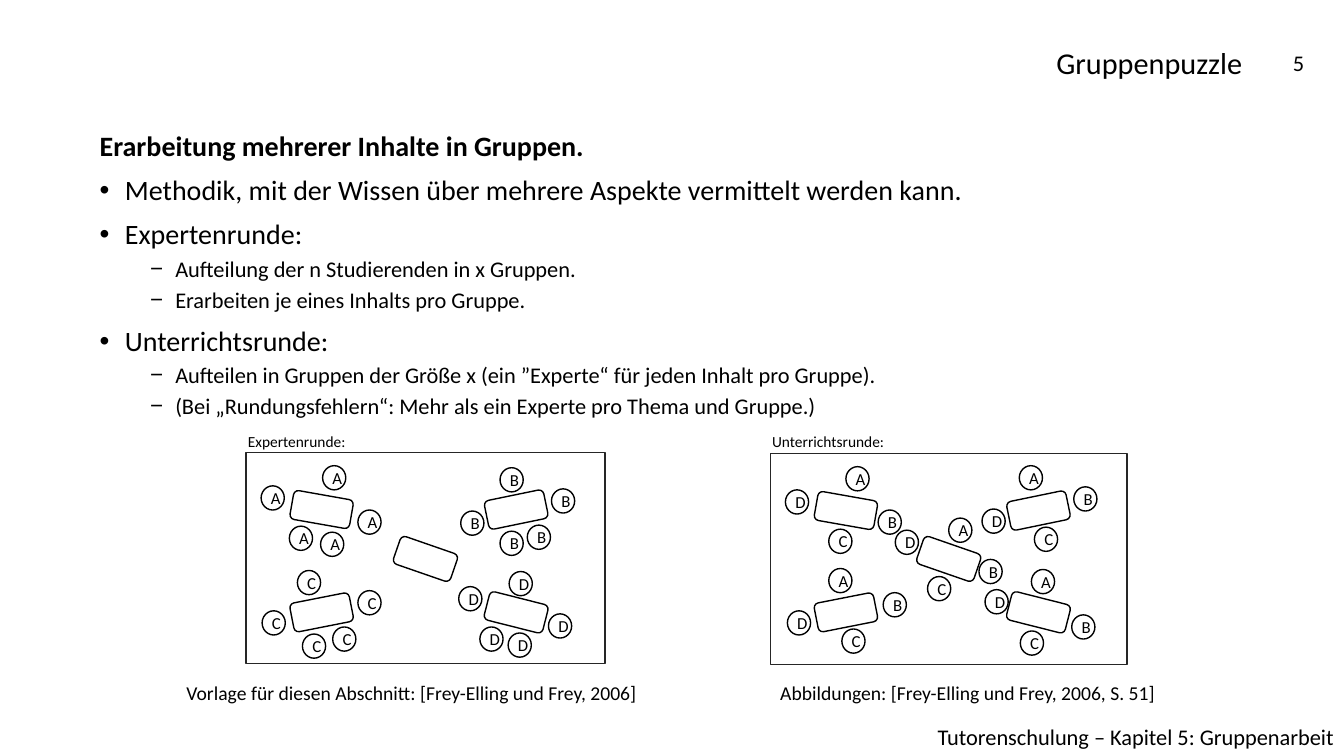
from dataclasses import dataclass

from lxml import etree
from pptx import Presentation
from pptx.dml.color import RGBColor
from pptx.enum.shapes import MSO_SHAPE
from pptx.enum.text import MSO_ANCHOR, MSO_AUTO_SIZE, PP_ALIGN
from pptx.oxml.ns import qn
from pptx.util import Inches, Pt

RECT, ROUND, OVAL = MSO_SHAPE.RECTANGLE, MSO_SHAPE.ROUNDED_RECTANGLE, MSO_SHAPE.OVAL
LEFT, MID, RIGHT = PP_ALIGN.LEFT, PP_ALIGN.CENTER, PP_ALIGN.RIGHT
TOP, CENTER = MSO_ANCHOR.TOP, MSO_ANCHOR.MIDDLE
GROW, FIXED = MSO_AUTO_SIZE.SHAPE_TO_FIT_TEXT, MSO_AUTO_SIZE.NONE
FONT = "Calibri"
COLORS = {"text": "000000", "fill": "FFFFFF", "frame": "262626"}

Box = tuple[float, float, float, float]
Spot = tuple[float, float]


@dataclass
class Label:
    text: str
    box: Box
    size: float
    align: int = LEFT
    anchor: int = TOP
    fit: int = GROW


@dataclass
class Point:
    text: str
    level: int = 0
    mark: str = "•"
    bold: bool = False


@dataclass
class Plan:
    label: Label
    frame: Box
    cols: tuple[float, float, float]
    rows: tuple[float, float, float]
    seats: dict[str, list[Spot]]


LABELS = [
    Label("Tutorenschulung – Kapitel 5: Gruppenarbeit", (4.86, 7.13, 8.47, 0.37), 16, RIGHT),
    Label("Gruppenpuzzle", (0.89, 0.4, 11.53, 0.44), 21.6, RIGHT, CENTER, FIXED),
    Label("5", (12.42, 0.4, 0.92, 0.44), 16, MID, CENTER, FIXED),
    Label("Vorlage für diesen Abschnitt: [Frey-Elling und Frey, 2006]", (1.75, 6.71, 4.74, 0.34), 14),
    Label("Abbildungen: [Frey-Elling und Frey, 2006, S. 51]", (7.64, 6.71, 4.74, 0.34), 14),
]

POINTS = [
    Point("Erarbeitung mehrerer Inhalte in Gruppen.", mark="", bold=True),
    Point("Methodik, mit der Wissen über mehrere Aspekte vermittelt werden kann."),
    Point("Expertenrunde:"),
    Point("Aufteilung der n Studierenden in x Gruppen.", 1, "−"),
    Point("Erarbeiten je eines Inhalts pro Gruppe.", 1, "−"),
    Point("Unterrichtsrunde:"),
    Point("Aufteilen in Gruppen der Größe x (ein ”Experte“ für jeden Inhalt pro Gruppe).", 1, "−"),
    Point("(Bei „Rundungsfehlern“: Mehr als ein Experte pro Thema und Gruppe.)", 1, "−"),
]
# Font size, space before and left margin for each list level
LEVELS = [(20, 10, 0.25), (16, 5, 0.75)]

# Column, row and turn of each table in a room
TABLES = [(0, 0, 10), (1, 1, 19.1), (0, 2, 348.8), (2, 2, 14.2), (2, 0, 348.3)]

PLANS = [
    Plan(
        Label("Expertenrunde:", (2.36, 4.24, 2.14, 0.29), 11),
        (2.44, 4.49, 3.56, 2.09), (2.89, 3.92, 4.82), (4.91, 5.4, 5.93),
        {
            "A": [(3.2, 4.62), (3.55, 5.06), (2.59, 4.82), (3.18, 5.28), (2.87, 5.22)],
            "B": [(4.96, 4.64), (5.23, 5.21), (4.96, 5.27), (4.57, 5.07), (5.47, 4.85)],
            "C": [(2.95, 5.66), (3.3, 6.22), (3, 6.29), (3.55, 5.86), (2.6, 6.06)],
            "D": [(5.05, 5.67), (5.44, 6.09), (5.04, 6.28), (4.76, 6.22), (4.55, 5.82)],
        },
    ),
    Plan(
        Label("Unterrichtsrunde:", (7.56, 4.24, 2.14, 0.29), 11),
        (7.64, 4.5, 3.54, 2.09), (8.09, 9.11, 10), (4.92, 5.4, 5.93),
        {
            "A": [(8.39, 4.63), (10.11, 4.62), (8.22, 5.64), (10.23, 5.65), (9.41, 5.14)],
            "B": [(9.71, 5.55), (10.65, 4.83), (10.63, 6.1), (8.76, 5.88), (8.71, 5.06)],
            "C": [(9.2, 5.72), (10.26, 5.23), (8.35, 6.24), (8.22, 5.25), (10.12, 6.26)],
            "D": [(8.88, 5.26), (7.79, 4.86), (9.74, 5.05), (7.81, 6.06), (9.77, 5.85)],
        },
    ),
]


def apply(item, values: dict) -> None:
    for name, value in values.items():
        setattr(item, name, value)


def write(para, text: str, size: float, bold: bool = False) -> None:
    run = para.add_run()
    run.text = text
    apply(run.font, {"name": FONT, "size": Pt(size), "bold": bold})
    run.font.color.rgb = RGBColor.from_string(COLORS["text"])


def add_label(shapes, label: Label) -> None:
    frame = shapes.add_textbox(*map(Inches, label.box)).text_frame
    apply(frame, {"word_wrap": True, "auto_size": label.fit, "vertical_anchor": label.anchor})
    para = frame.paragraphs[0]
    para.alignment = label.align
    write(para, label.text, label.size)


def add_points(shapes, box: Box) -> None:
    frame = shapes.add_textbox(*map(Inches, box)).text_frame
    frame.word_wrap = True
    for i, point in enumerate(POINTS):
        para = frame.add_paragraph() if i else frame.paragraphs[0]
        size, space, margin = LEVELS[point.level]
        apply(para, {"level": point.level, "line_spacing": 0.9, "space_before": Pt(space)})
        write(para, point.text, size, point.bold)
        if point.mark:
            props = para._p.get_or_add_pPr()
            props.set("marL", str(Inches(margin)))
            props.set("indent", str(Inches(-0.25)))
            etree.SubElement(props, qn("a:buFont")).set("typeface", "Arial")
            etree.SubElement(props, qn("a:buChar")).set("char", point.mark)


def add_form(shapes, kind: int, box: Box, line: str = "text", turn: float = 0):
    form = shapes.add_shape(kind, *map(Inches, box))
    form.rotation = turn
    form.shadow.inherit = False
    form.fill.solid()
    form.fill.fore_color.rgb = RGBColor.from_string(COLORS["fill"])
    form.line.color.rgb = RGBColor.from_string(COLORS[line])
    form.line.width = Pt(1)
    return form


def add_plan(shapes, plan: Plan) -> None:
    group = shapes.add_group_shape().shapes
    add_form(group, RECT, plan.frame, "frame")
    for col, row, turn in TABLES:
        add_form(group, ROUND, (plan.cols[col], plan.rows[row], 0.6, 0.29), turn=turn)
    for name, spots in plan.seats.items():
        for x, y in spots:
            seat = add_form(group, OVAL, (x, y, 0.23, 0.24))
            seat.text_frame.vertical_anchor = CENTER
            para = seat.text_frame.paragraphs[0]
            para.alignment = MID
            write(para, name, 12)
    add_label(group, plan.label)


def main() -> None:
    deck = Presentation()
    apply(deck, {"slide_width": Inches(13.33), "slide_height": Inches(7.5)})
    shapes = deck.slides.add_slide(deck.slide_layouts[6]).shapes

    # Footer, title, page number and sources
    for label in LABELS:
        add_label(shapes, label)

    # Bullet list
    add_points(shapes, (0.89, 1.26, 11.53, 3.01))

    # Seating plans
    for plan in PLANS:
        add_plan(shapes, plan)

    deck.save("out.pptx")


if __name__ == "__main__":
    main()
